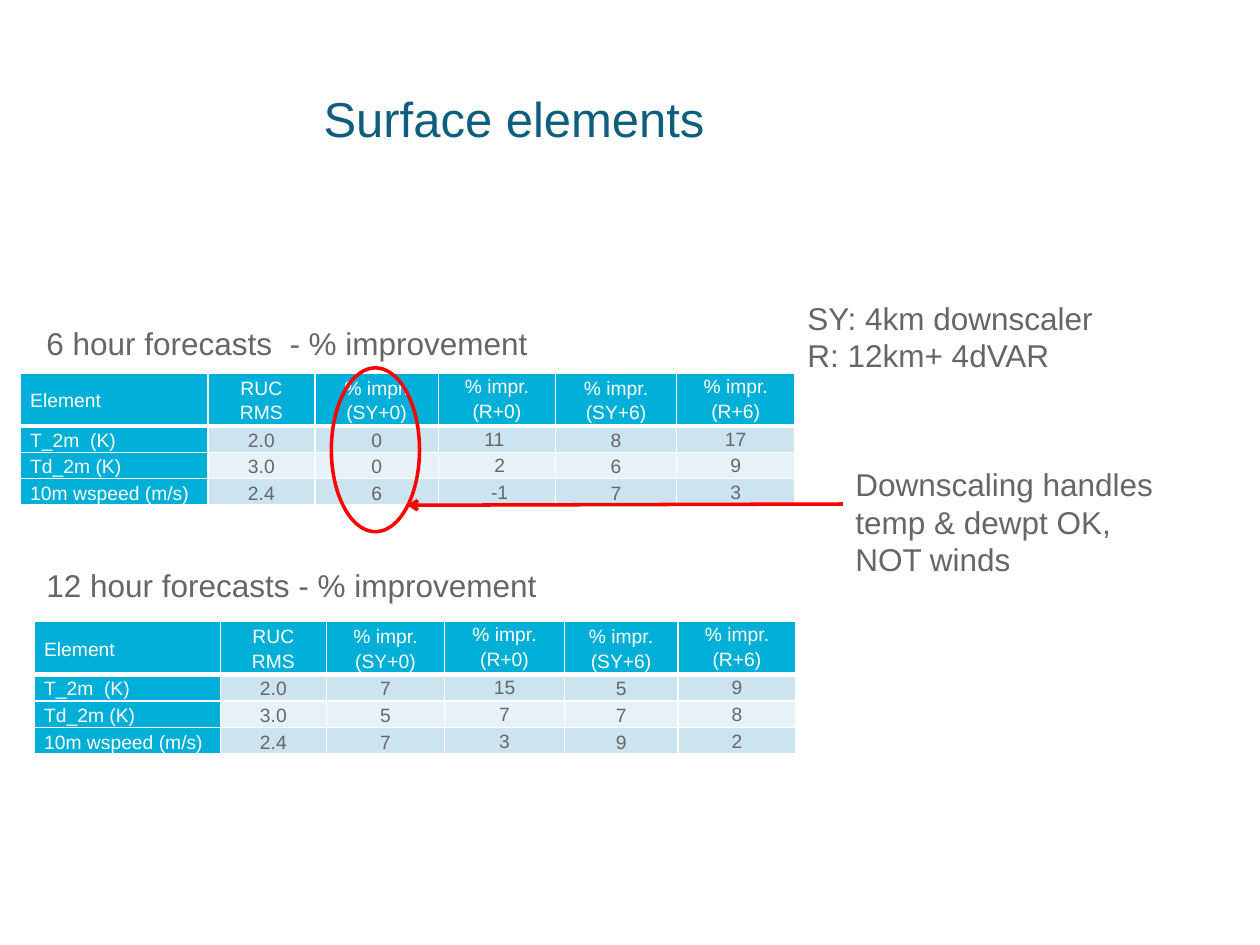
from pptx import Presentation
from pptx.dml.color import RGBColor
from pptx.enum.shapes import MSO_CONNECTOR as Connector, MSO_SHAPE as Shape
from pptx.enum.text import MSO_ANCHOR as Anchor, MSO_AUTO_SIZE as AutoSize, PP_ALIGN as Align
from pptx.oxml.ns import qn
from pptx.util import Emu, Pt
from lxml.etree import SubElement

EMU_PER_PX = 9144  # 100 px to the inch


def px(length):
    return Emu(length * EMU_PER_PX)


def color(hex_code):
    return RGBColor.from_string(hex_code)


class SlideBuilder:
    FONT = "Arial"
    TITLE, TEXT, WHITE, RED = "0E5F7E", "666666", "FFFFFF", "FF0000"
    HEADER, BANDS = "00AFD7", ("CCE3F0", "E7F2F8")
    TOP_COLUMNS = (3, 5)  # columns whose text sits at the top of the cell

    def __init__(self, page):
        self.page = page

    def style(self, para, size, hex_code, align=Align.LEFT):
        para.alignment = align
        for span in para.runs:
            span.font.name = self.FONT
            span.font.size = Pt(size)
            span.font.color.rgb = color(hex_code)

    def text(self, left, top, width, height, words, size=18, hex_code=TEXT,
             align=Align.LEFT, anchor=Anchor.TOP, fit=AutoSize.SHAPE_TO_FIT_TEXT):
        box = self.page.shapes.add_textbox(px(left), px(top), px(width), px(height))
        frame = box.text_frame
        frame.word_wrap = True
        frame.auto_size = fit
        frame.vertical_anchor = anchor
        frame.text = words
        for para in frame.paragraphs:
            self.style(para, size, hex_code, align)

    def borders(self, cell, bottom):
        properties = cell._tc.get_or_add_tcPr()
        for side, points in (("L", 1), ("R", 1), ("T", 1), ("B", bottom)):
            line = SubElement(properties, qn(f"a:ln{side}"), w=str(Pt(points)))
            fill = SubElement(line, qn("a:solidFill"))
            SubElement(fill, qn("a:srgbClr"), val=self.WHITE)

    def cell(self, cell, words, row, column):
        is_label = row == 0 or column == 0
        cell.text = words
        cell.margin_left = cell.margin_right = px(8)
        cell.margin_top = cell.margin_bottom = 0
        cell.vertical_anchor = Anchor.TOP if column in self.TOP_COLUMNS else Anchor.MIDDLE
        para = cell.text_frame.paragraphs[0]
        para.line_spacing = 1.15
        self.style(para, 11, self.WHITE if is_label else self.TEXT,
                   Align.CENTER if column else Align.LEFT)
        self.borders(cell, bottom=1 if row else 3)
        cell.fill.solid()
        cell.fill.fore_color.rgb = color(self.HEADER if is_label else self.BANDS[(row - 1) % 2])

    def table(self, left, top, widths, rows):
        heights = [42] + [21] * (len(rows) - 1)
        grid = self.page.shapes.add_table(len(rows), len(widths), px(left), px(top),
                                          px(sum(widths)), px(sum(heights))).table
        for column, width in zip(grid.columns, widths):
            column.width = px(width)
        for row, (height, values) in enumerate(zip(heights, rows)):
            grid.rows[row].height = px(height)
            for column, words in enumerate(values):
                self.cell(grid.cell(row, column), words, row, column)

    def ring(self, left, top, width, height):
        ellipse = self.page.shapes.add_shape(Shape.OVAL, px(left), px(top), px(width), px(height))
        ellipse.shadow.inherit = False
        ellipse.fill.background()
        ellipse.line.color.rgb = color(self.RED)
        ellipse.line.width = Pt(2)

    def arrow(self, *ends):
        line = self.page.shapes.add_connector(Connector.STRAIGHT, *map(px, ends))
        line.line.color.rgb = color(self.RED)
        line.line.width = Pt(2)
        SubElement(line.line._get_or_add_ln(), qn("a:tailEnd"), type="arrow")
        SubElement(line._element.spPr, qn("a:effectLst"))


HEADINGS = ("Element", "RUC RMS", "% impr. (SY+0)", "% impr. (R+0)",
            "% impr. (SY+6)", "% impr. (R+6)")
ELEMENTS = (("T_2m  (K)", "2.0"), ("Td_2m (K)", "3.0"), ("10m wspeed (m/s)", "2.4"))
SIX_HOUR = (("0", "11 ", "8", "17"), ("0", " 2", "6", "9"), ("6", " -1", "7", "3"))
TWELVE_HOUR = (("7", "15", "5", "9"), ("5", "7", "7", "8"), ("7", "3", "9", "2"))


def forecast_rows(improvements):
    return [HEADINGS] + [element + values for element, values in zip(ELEMENTS, improvements)]


def main():
    deck = Presentation()
    deck.slide_width, deck.slide_height = px(1000), px(750)
    builder = SlideBuilder(deck.slides.add_slide(deck.slide_layouts[6]))

    builder.text(51, 31, 714, 125, "Surface elements", 28, builder.TITLE,
                 Align.CENTER, Anchor.MIDDLE, AutoSize.NONE)
    builder.table(16, 296, (149, 85, 98, 93, 96, 94), forecast_rows(SIX_HOUR))
    builder.text(27, 252, 413, 40, "6 hour forecasts  - % improvement")
    builder.text(27, 444, 448, 40, "12 hour forecasts - % improvement")
    builder.table(27, 493, (148, 84, 94, 95, 90, 94), forecast_rows(TWELVE_HOUR))
    builder.ring(263, 292, 70, 130)
    builder.text(669, 364, 291, 101, "Downscaling handles temp & dewpt OK,\nNOT winds")
    builder.arrow(669, 400, 323, 401)
    builder.text(631, 232, 319, 71, "SY: 4km downscaler\nR: 12km+ 4dVAR")

    deck.save("out.pptx")


if __name__ == "__main__":
    main()
